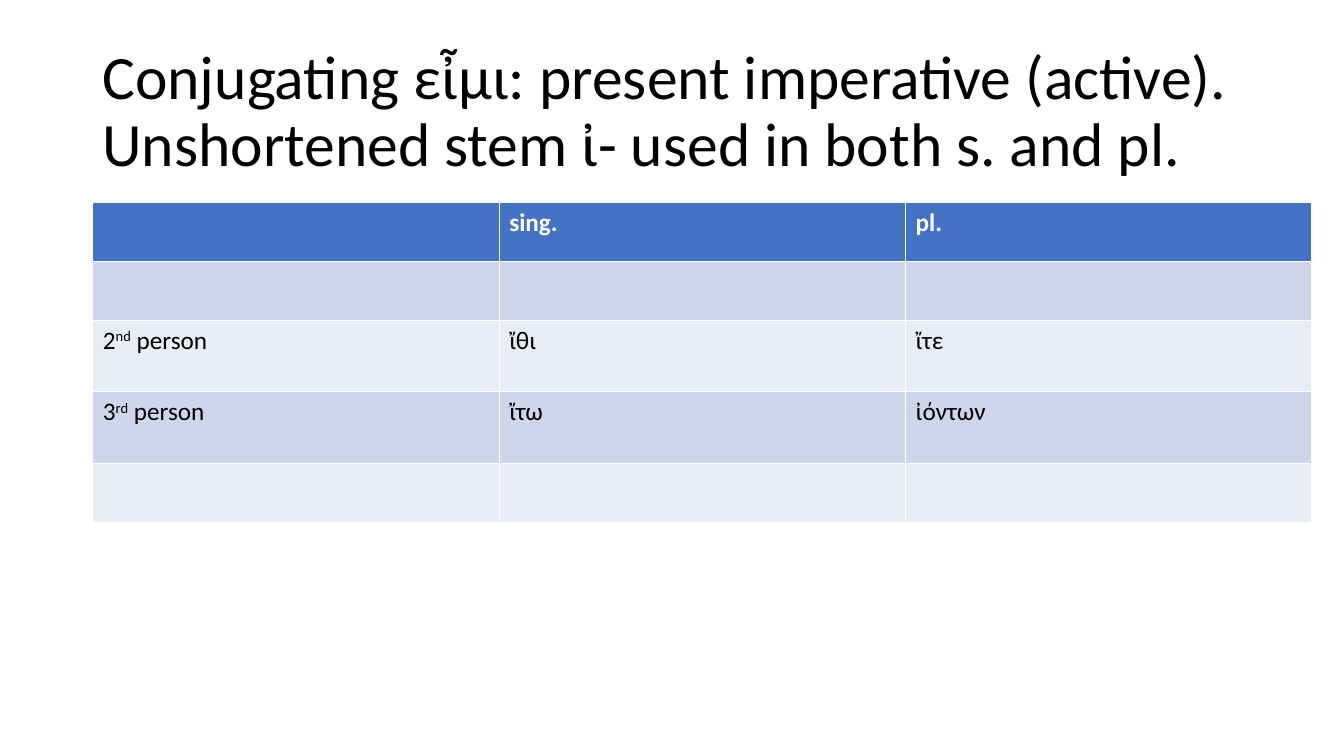
"""Build a slide with the present imperative of εἶμι."""
from dataclasses import dataclass

from pptx import Presentation
from pptx.dml.color import RGBColor
from pptx.enum.text import MSO_ANCHOR
from pptx.util import Cm, Pt

MIDDLE = MSO_ANCHOR.MIDDLE
FONT = "Calibri"
COLORS = {
    "text": "000000",
    "header_text": "FFFFFF",
    "header": "4472C4",
    "odd_band": "CFD5EA",
    "even_band": "E9EBF5",
}
COLUMN_WIDTH = 10.24


@dataclass(frozen=True)
class FormRow:
    height: float = 1.49
    number: str = ""
    ordinal: str = ""
    label: str = ""
    singular: str = ""
    plural: str = ""


FORM_ROWS = [
    FormRow(singular="sing.", plural="pl."),
    FormRow(),
    FormRow(1.8, "2", "nd", " person", "ἴθι", "ἴτε"),
    FormRow(1.8, "3", "rd", " person", "ἴτω", "ἰόντων"),
    FormRow(),
]


def style_paragraph(paragraph, size: float, color: str, bold: bool = False) -> None:
    paragraph.font.name = FONT
    paragraph.font.size = Pt(size)
    paragraph.font.bold = bold
    paragraph.font.color.rgb = RGBColor.from_string(COLORS[color])


def add_heading(slide, wording: str) -> None:
    heading = slide.shapes.add_textbox(Cm(2.33), Cm(1.01), Cm(29.21), Cm(3.68))
    frame = heading.text_frame
    frame.word_wrap = True
    frame.vertical_anchor = MIDDLE
    paragraph = frame.paragraphs[0]
    paragraph.text = wording
    paragraph.line_spacing = 0.9
    style_paragraph(paragraph, 44, "text")


def write_person(paragraph, form: FormRow) -> None:
    for part in (form.number, form.ordinal, form.label):
        if part:
            run = paragraph.add_run()
            run.text = part
            if part == form.ordinal:
                run._r.get_or_add_rPr().set("baseline", "30000")


def add_conjugation(slide, forms: list[FormRow]) -> None:
    total_height = sum(form.height for form in forms)
    conjugation = slide.shapes.add_table(
        len(forms), 3, Cm(2.34), Cm(5.09), Cm(3 * COLUMN_WIDTH), Cm(total_height)
    ).table
    for column in conjugation.columns:
        column.width = Cm(COLUMN_WIDTH)
    for index, form in enumerate(forms):
        row = conjugation.rows[index]
        row.height = Cm(form.height)
        is_header = index == 0
        band = "header" if is_header else "odd_band" if index % 2 else "even_band"
        person, singular, plural = row.cells
        write_person(person.text_frame.paragraphs[0], form)
        singular.text = form.singular
        plural.text = form.plural
        for cell in row.cells:
            cell.fill.solid()
            cell.fill.fore_color.rgb = RGBColor.from_string(COLORS[band])
            text_color = "header_text" if is_header else "text"
            style_paragraph(cell.text_frame.paragraphs[0], 18, text_color, is_header)


def main() -> None:
    presentation = Presentation()
    presentation.slide_width = Cm(33.87)
    presentation.slide_height = Cm(19.05)
    slide = presentation.slides.add_slide(presentation.slide_layouts[6])
    add_heading(
        slide,
        "Conjugating εἶμι: present imperative (active). "
        "Unshortened stem ἰ- used in both s. and pl.",
    )
    add_conjugation(slide, FORM_ROWS)
    presentation.save("out.pptx")


if __name__ == "__main__":
    main()
